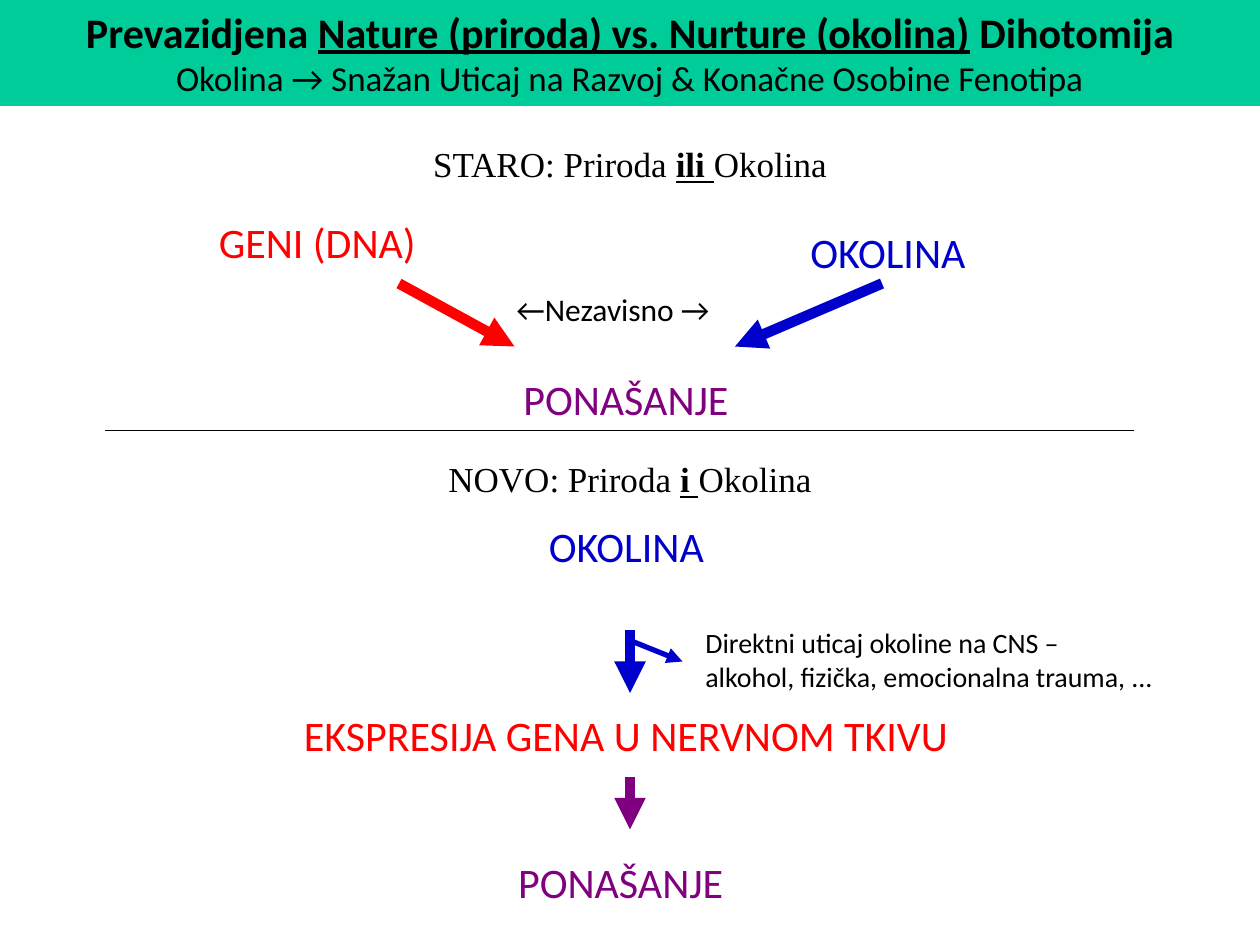
from dataclasses import dataclass

from lxml.etree import SubElement
from pptx import Presentation
from pptx.dml.color import RGBColor
from pptx.enum.shapes import MSO_CONNECTOR, MSO_SHAPE
from pptx.enum.text import MSO_ANCHOR, MSO_AUTO_SIZE, PP_ALIGN
from pptx.oxml.ns import qn
from pptx.util import Pt


@dataclass(frozen=True)
class Theme:
    banner: str = "00CC99"
    black: str = "000000"
    genes: str = "FF0000"
    environment: str = "0000CC"
    behaviour: str = "800080"
    sans: str = "Calibri"
    serif: str = "Times New Roman"
    large: int = 24
    medium: int = 20
    label: int = 18
    note: int = 16


THEME = Theme()
SLIDE_WIDTH, SLIDE_HEIGHT = 720, 540
CENTRE = SLIDE_WIDTH / 2


def add_run(paragraph, text, size, color=THEME.black, font=THEME.sans, bold=False, underline=False):
    run = paragraph.add_run()
    run.text = text
    run.font.size = Pt(size)
    run.font.name = font
    run.font.bold = bold
    run.font.underline = underline
    run.font.color.rgb = RGBColor.from_string(color)


def add_text(slide, left, top, width, height, alignment=PP_ALIGN.LEFT, wrap=True):
    box = slide.shapes.add_textbox(Pt(left), Pt(top), Pt(width), Pt(height))
    frame = box.text_frame
    frame.word_wrap = wrap
    frame.auto_size = MSO_AUTO_SIZE.SHAPE_TO_FIT_TEXT
    paragraph = frame.paragraphs[0]
    paragraph.alignment = alignment
    return paragraph, frame


def add_label(slide, text, left, top, width, height, size, color, wrap=True):
    paragraph, _ = add_text(slide, left, top, width, height, wrap=wrap)
    add_run(paragraph, text, size, color)


def add_stage(slide, text, top, color, space_size=THEME.medium, width=SLIDE_WIDTH):
    paragraph, _ = add_text(slide, 0, top, width, 36.5, PP_ALIGN.CENTER)
    add_run(paragraph, text, THEME.large, color)
    add_run(paragraph, " ", space_size)


def add_heading(slide, top, opening, conjunction):
    paragraph, _ = add_text(slide, 0, top, SLIDE_WIDTH, 31.5, PP_ALIGN.CENTER)
    add_run(paragraph, opening, THEME.medium, font=THEME.serif)
    add_run(paragraph, conjunction, THEME.medium, font=THEME.serif, bold=True, underline=True)
    add_run(paragraph, "Okolina", THEME.medium, font=THEME.serif)


def add_line(slide, start, end, color, weight, arrow=True):
    connector = slide.shapes.add_connector(MSO_CONNECTOR.STRAIGHT, *map(Pt, start + end))
    connector.line.color.rgb = RGBColor.from_string(color)
    connector.line.width = Pt(weight)
    if arrow:
        SubElement(connector.line._get_or_add_ln(), qn("a:tailEnd"), type="triangle")
    SubElement(connector._element.spPr, qn("a:effectLst"))


def add_banner(slide):
    banner = slide.shapes.add_shape(MSO_SHAPE.RECTANGLE, 0, 0, Pt(SLIDE_WIDTH), Pt(60.5))
    banner.shadow.inherit = False
    banner.fill.solid()
    banner.fill.fore_color.rgb = RGBColor.from_string(THEME.banner)
    banner.line.fill.background()
    frame = banner.text_frame
    frame.word_wrap = True
    frame.auto_size = MSO_AUTO_SIZE.SHAPE_TO_FIT_TEXT
    frame.vertical_anchor = MSO_ANCHOR.TOP
    title, subtitle = frame.paragraphs[0], frame.add_paragraph()
    title.alignment = subtitle.alignment = PP_ALIGN.CENTER
    add_run(title, "Prevazidjena ", THEME.large, bold=True)
    add_run(title, "Nature (priroda) vs. Nurture (okolina)", THEME.large, bold=True, underline=True)
    add_run(title, " Dihotomija", THEME.large, bold=True)
    add_run(subtitle, "Okolina → Snažan Uticaj na Razvoj & Konačne Osobine Fenotipa", THEME.medium)


def add_old_view(slide):
    add_heading(slide, 78, "STARO: Priroda ", "ili ")
    add_label(slide, "GENI (DNA)", 118, 120, 149, 36.5, THEME.large, THEME.genes, wrap=False)
    add_label(slide, "OKOLINA", 456, 126, 134, 36.5, THEME.large, THEME.environment)
    add_label(slide, "←Nezavisno →", 288, 162, 136, 29, THEME.label, THEME.black, wrap=False)
    add_line(slide, (228, 162), (294, 198), THEME.genes, 6)
    add_line(slide, (504, 162), (420, 198), THEME.environment, 6)
    add_stage(slide, "PONAŠANJE", 210, THEME.behaviour)


def add_new_view(slide):
    add_heading(slide, 258, "NOVO: Priroda ", "i ")
    add_stage(slide, "OKOLINA", 294, THEME.environment, THEME.label)
    add_line(slide, (CENTRE, 360), (CENTRE, 396), THEME.environment, 6)
    add_line(slide, (CENTRE, 366), (390, 378), THEME.environment, 3)
    paragraph, frame = add_text(slide, 396, 354, 273, 46, wrap=False)
    add_run(paragraph, "Direktni uticaj okoline na CNS –", THEME.note)
    add_run(frame.add_paragraph(), "alkohol, fizička, emocionalna trauma, ...", THEME.note)
    add_stage(slide, "EKSPRESIJA GENA U NERVNOM TKIVU", 402, THEME.genes)
    add_line(slide, (CENTRE, 444), (CENTRE, 474), THEME.behaviour, 6)
    add_stage(slide, "PONAŠANJE", 486, THEME.behaviour, width=714)


def main():
    presentation = Presentation()
    presentation.slide_width, presentation.slide_height = Pt(SLIDE_WIDTH), Pt(SLIDE_HEIGHT)
    slide = presentation.slides.add_slide(presentation.slide_layouts[6])
    add_banner(slide)
    add_old_view(slide)
    add_line(slide, (60, 246), (648, 246), THEME.black, 0.75, arrow=False)
    add_new_view(slide)
    presentation.save("out.pptx")


if __name__ == "__main__":
    main()
